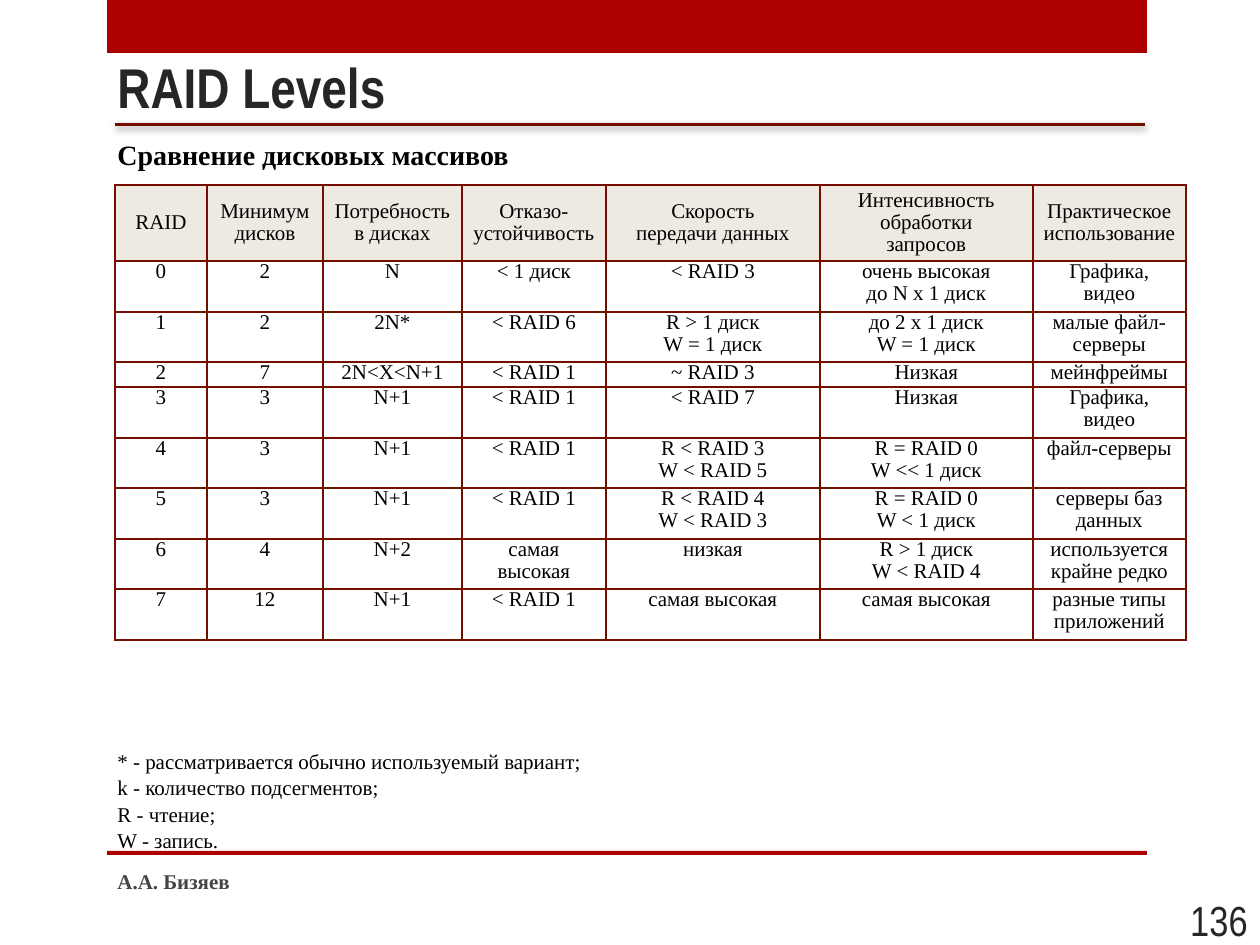
from copy import deepcopy

from lxml.etree import SubElement
from pptx import Presentation
from pptx.dml.color import RGBColor
from pptx.enum.shapes import MSO_CONNECTOR, MSO_SHAPE
from pptx.enum.text import MSO_ANCHOR, PP_ALIGN
from pptx.oxml.ns import qn
from pptx.util import Emu, Pt

PX = 914400 / 126
SERIF, NARROW = "Times New Roman", "Arial Narrow"
RED, MAROON, CREAM, BLACK, DARK = "AD0101", "730E00", "EEEAE2", "000000", "262626"

BARS = [(107, 0, 1040, 53), (107, 851, 1040, 4)]
RULE = (115, 125, 1145, 125)
BODY = {"size": Pt(12), "name": SERIF, "bold": False, "color": BLACK}
NOTES = [
    "* - рассматривается обычно используемый вариант;",
    "k - количество подсегментов;",
    "R - чтение;",
    "W - запись.",
]
TEXTS = [
    ((105, 37, 1091, 89), ["RAID Levels"], {"size": Pt(32), "name": NARROW, "bold": True, "color": DARK},
     MSO_ANCHOR.BOTTOM, {}),
    ((105, 130, 1012, 46), ["Сравнение дисковых массивов"], BODY | {"size": Pt(16), "bold": True},
     MSO_ANCHOR.TOP, {"line_spacing": 1.05}),
    ((105, 741, 630, 115), NOTES, BODY, MSO_ANCHOR.TOP, {"line_spacing": 1.05}),
    ((105, 856, 672, 50), ["А.А. Бизяев"], BODY | {"bold": True, "color": "454545"}, MSO_ANCHOR.MIDDLE, {}),
    ((1155, 895, 105, 50), ["136"], {"size": Pt(24), "name": NARROW, "bold": False, "color": DARK},
     MSO_ANCHOR.MIDDLE, {"alignment": PP_ALIGN.RIGHT}),
]

TABLE_ORIGIN = (115, 185)
COLUMNS = [92, 116, 139, 144, 214, 213, 153]
ROWS = [76, 51, 50, 25, 51, 50, 51, 50, 51]
LEVELS = [
    ["RAID", "Минимум\nдисков", "Потребность\nв дисках", "Отказо-\nустойчивость",
     "Скорость\nпередачи данных", "Интенсивность\nобработки\nзапросов", "Практическое\nиспользование"],
    ["0", "2", "N", "< 1 диск", "< RAID 3", "очень высокая\nдо N х 1 диск", "Графика, видео"],
    ["1", "2", "2N*", "< RAID 6", "R > 1 диск\nW = 1 диск", "до 2 х 1 диск\nW = 1 диск", "малые файл-серверы"],
    ["2", "7", "2N<X<N+1", "< RAID 1", "~ RAID 3", "Низкая", "мейнфреймы"],
    ["3", "3", "N+1", "< RAID 1", "< RAID 7", "Низкая", "Графика, видео"],
    ["4", "3", "N+1", "< RAID 1", "R < RAID 3\nW < RAID 5", "R = RAID 0\nW << 1 диск", "файл-серверы"],
    ["5", "3", "N+1", "< RAID 1", "R < RAID 4\nW < RAID 3", "R = RAID 0\nW < 1 диск", "серверы баз данных"],
    ["6", "4", "N+2", "самая высокая", "низкая", "R > 1 диск\nW < RAID 4", "используется крайне редко"],
    ["7", "12", "N+1", "< RAID 1", "самая высокая", "самая высокая", "разные типы приложений"],
]


def px(*lengths):
    return [Emu(round(length * PX)) for length in lengths]


def paint(color_format, value):
    color_format.rgb = RGBColor.from_string(value)


def fill_solid(fill, value):
    fill.solid()
    paint(fill.fore_color, value)


def apply(target, values):
    for name, value in values.items():
        setattr(target, name, value)


def write(para, text, font, layout):
    para.text = text
    apply(para, layout)
    for span in para.runs:
        apply(span.font, {name: value for name, value in font.items() if name != "color"})
        paint(span.font.color, font["color"])
    for line_break in para._p.findall(qn("a:br")):
        line_break.append(deepcopy(para.runs[0].font._element))


def add_text(page, place, lines, font, anchor, layout):
    frame = page.shapes.add_textbox(*px(*place)).text_frame
    apply(frame, {"word_wrap": True, "vertical_anchor": anchor})
    for index, line in enumerate(lines):
        para = frame.add_paragraph() if index else frame.paragraphs[0]
        write(para, line, font, layout)


def add_bar(page, place):
    bar = page.shapes.add_shape(MSO_SHAPE.RECTANGLE, *px(*place))
    bar.shadow.inherit = False
    fill_solid(bar.fill, RED)
    bar.line.fill.background()


def add_rule(page):
    rule = page.shapes.add_connector(MSO_CONNECTOR.STRAIGHT, *px(*RULE))
    rule.line.width = Pt(1.75)
    paint(rule.line.color, MAROON)
    effects = SubElement(rule._element.spPr, qn("a:effectLst"))
    shadow = SubElement(effects, qn("a:outerShdw"), blurRad=str(Pt(4)), dist=str(Pt(1)),
                        dir=str(88 * 60000), rotWithShape="0")
    color = SubElement(shadow, qn("a:srgbClr"), val=BLACK)
    SubElement(color, qn("a:alpha"), val="40000")


def add_borders(cell):
    properties = cell._tc.get_or_add_tcPr()
    for index, side in enumerate(("lnL", "lnR", "lnT", "lnB")):
        border = properties.makeelement(qn(f"a:{side}"), {"w": str(Pt(1))})
        SubElement(SubElement(border, qn("a:solidFill")), qn("a:srgbClr"), val=MAROON)
        properties.insert(index, border)


def add_levels(page):
    size = px(*TABLE_ORIGIN, sum(COLUMNS), sum(ROWS))
    table = page.shapes.add_table(len(ROWS), len(COLUMNS), *size).table
    apply(table, {"first_row": False, "horz_banding": False})
    for column, width in zip(table.columns, px(*COLUMNS)):
        column.width = width
    for row, height, texts, is_header in zip(table.rows, px(*ROWS), LEVELS, [True] + [False] * len(ROWS)):
        row.height = height
        for cell, text in zip(row.cells, texts):
            side = px(9)[0]
            apply(cell, {"margin_left": side, "margin_right": side, "margin_top": 0, "margin_bottom": 0,
                         "vertical_anchor": MSO_ANCHOR.MIDDLE if is_header else MSO_ANCHOR.TOP})
            if is_header:
                fill_solid(cell.fill, CREAM)
            else:
                cell.fill.background()
            add_borders(cell)
            write(cell.text_frame.paragraphs[0], text, BODY,
                  {"alignment": PP_ALIGN.CENTER, "line_spacing": 0.95})


def main():
    """Build the slide comparing RAID levels."""
    deck = Presentation()
    deck.slide_width, deck.slide_height = px(1260, 945)
    page = deck.slides.add_slide(deck.slide_layouts[6])
    for place in BARS:
        add_bar(page, place)
    add_levels(page)
    for text in TEXTS:
        add_text(page, *text)
    add_rule(page)
    deck.save("out.pptx")


if __name__ == "__main__":
    main()
